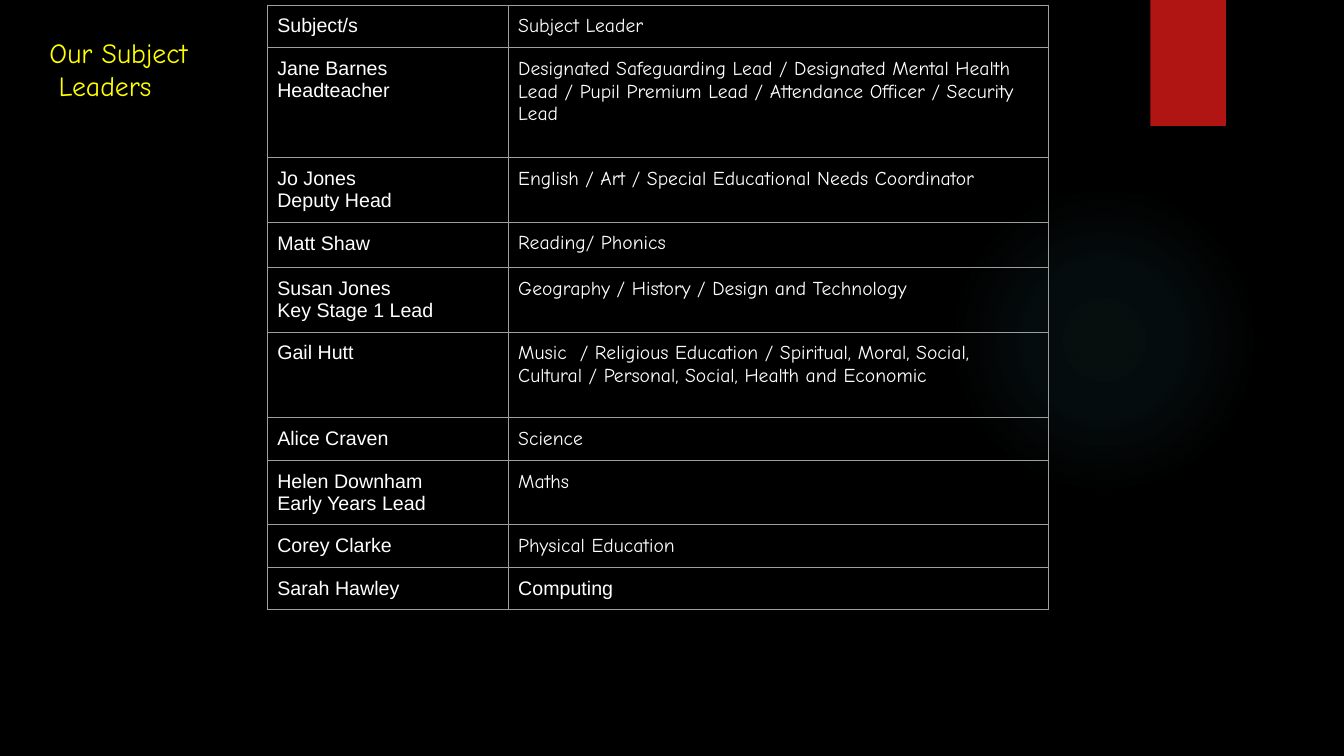
import pptx
import pptx.dml.color
import pptx.enum.shapes
import pptx.enum.text
import pptx.oxml
import pptx.oxml.ns
import pptx.util

TITLE = "Our Subject\v Leaders"
# Left cell, right cell, row height in inches
ROWS = [
    ("Subject/s", "Subject Leader", 0.42),
    ("Jane Barnes\nHeadteacher",
     "Designated Safeguarding Lead / Designated Mental Health Lead / "
     "Pupil Premium Lead / Attendance Officer / Security Lead", 1.09),
    ("Jo Jones\nDeputy Head",
     "English / Art / Special Educational Needs Coordinator", 0.64),
    ("Matt Shaw", "Reading/ Phonics", 0.45),
    ("Susan Jones\nKey Stage 1 Lead",
     "Geography / History / Design and Technology", 0.64),
    ("Gail Hutt",
     "Music  / Religious Education / Spiritual, Moral, Social, Cultural / "
     "Personal, Social, Health and Economic", 0.85),
    ("Alice Craven", "Science", 0.42),
    ("Helen Downham\nEarly Years Lead", "Maths", 0.64),
    ("Corey Clarke", "Physical Education", 0.42),
    ("Sarah Hawley", "Computing", 0.42),
]
COLUMN_WIDTHS = (2.39, 5.36)
PLAIN_FONT, HAND_FONT = "Arial", "Comic Neue"
HAND_FONT_EXCEPTIONS = {"Computing"}
BLACK, WHITE, YELLOW, RED = "000000", "FFFFFF", "FFFF00", "B01513"
GLOW, GRID = "50B9C1", "9E9E9E"
GLOW_STOPS = ((0, 7), (36, 6), (69, 0), (100, 0))  # position %, opacity %

Inches = pptx.util.Inches


def color(hex_string):
    return pptx.dml.color.RGBColor.from_string(hex_string)


def format_text(text_frame, font_name, size, hex_color):
    for paragraph in text_frame.paragraphs:
        paragraph.alignment = pptx.enum.text.PP_ALIGN.LEFT
        for run in paragraph.runs:
            run.font.name = font_name
            run.font.size = pptx.util.Pt(size)
            run.font.color.rgb = color(hex_color)


def add_decoration(slide, kind, left, top, width, height):
    """Add a borderless shape behind the title."""
    shape = slide.shapes.add_shape(
        kind, Inches(left), Inches(top), Inches(width), Inches(height))
    shape.shadow.inherit = False
    shape.line.fill.background()
    slide.shapes.title.element.addprevious(shape.element)
    return shape


def fill_with_glow(shape):
    stops = "".join(
        f'<a:gs pos="{position * 1000}"><a:srgbClr val="{GLOW}">'
        f'<a:alpha val="{opacity * 1000}"/></a:srgbClr></a:gs>'
        for position, opacity in GLOW_STOPS)
    gradient = pptx.oxml.parse_xml(
        f'<a:gradFill {pptx.oxml.ns.nsdecls("a")}><a:gsLst>{stops}</a:gsLst>'
        '<a:path path="circle"><a:fillToRect l="50000" t="50000" r="50000" b="50000"/>'
        '</a:path></a:gradFill>')
    shape.element.spPr.find(pptx.oxml.ns.qn("a:prstGeom")).addnext(gradient)


def add_borders(cell):
    properties = cell._tc.get_or_add_tcPr()
    for side in "LRTB":
        properties.append(pptx.oxml.parse_xml(
            f'<a:ln{side} {pptx.oxml.ns.nsdecls("a")} w="{pptx.util.Pt(0.75)}">'
            f'<a:solidFill><a:srgbClr val="{GRID}"/></a:solidFill></a:ln{side}>'))


def add_leaders_table(slide):
    frame = slide.shapes.add_table(
        len(ROWS), len(COLUMN_WIDTHS), Inches(2.65), Inches(0.05),
        Inches(sum(COLUMN_WIDTHS)), Inches(sum(row[-1] for row in ROWS)))
    table = frame.table
    table.first_row = table.horz_banding = False
    for column, width in zip(table.columns, COLUMN_WIDTHS):
        column.width = Inches(width)
    for row, (*texts, height) in zip(table.rows, ROWS):
        row.height = Inches(height)
        for cell, text, font in zip(row.cells, texts, (PLAIN_FONT, HAND_FONT)):
            cell.margin_left = cell.margin_right = Inches(0.1)
            cell.margin_top = cell.margin_bottom = Inches(0.1)
            add_borders(cell)
            cell.fill.background()
            cell.text_frame.text = text
            if text in HAND_FONT_EXCEPTIONS:
                font = PLAIN_FONT
            format_text(cell.text_frame, font, 14, WHITE)


def main():
    presentation = pptx.Presentation()
    presentation.slide_width = Inches(13.33)
    presentation.slide_height = Inches(7.5)
    slide = presentation.slides.add_slide(presentation.slide_layouts[5])
    slide.background.fill.solid()
    slide.background.fill.fore_color.rgb = color(BLACK)

    shapes = pptx.enum.shapes.MSO_SHAPE
    fill_with_glow(add_decoration(slide, shapes.OVAL, 9.41, 1.83, 3.08, 3.08))
    tab = add_decoration(slide, shapes.RECTANGLE, 11.41, 0, 0.75, 1.25)
    tab.fill.solid()
    tab.fill.fore_color.rgb = color(RED)

    title = slide.shapes.title
    title.left, title.top = Inches(0.39), Inches(0.3)
    title.width, title.height = Inches(12.28), Inches(0.66)
    title.text_frame.text = TITLE
    title.text_frame.vertical_anchor = pptx.enum.text.MSO_ANCHOR.TOP
    format_text(title.text_frame, HAND_FONT, 19.8, YELLOW)

    add_leaders_table(slide)
    presentation.save("out.pptx")


if __name__ == "__main__":
    main()
